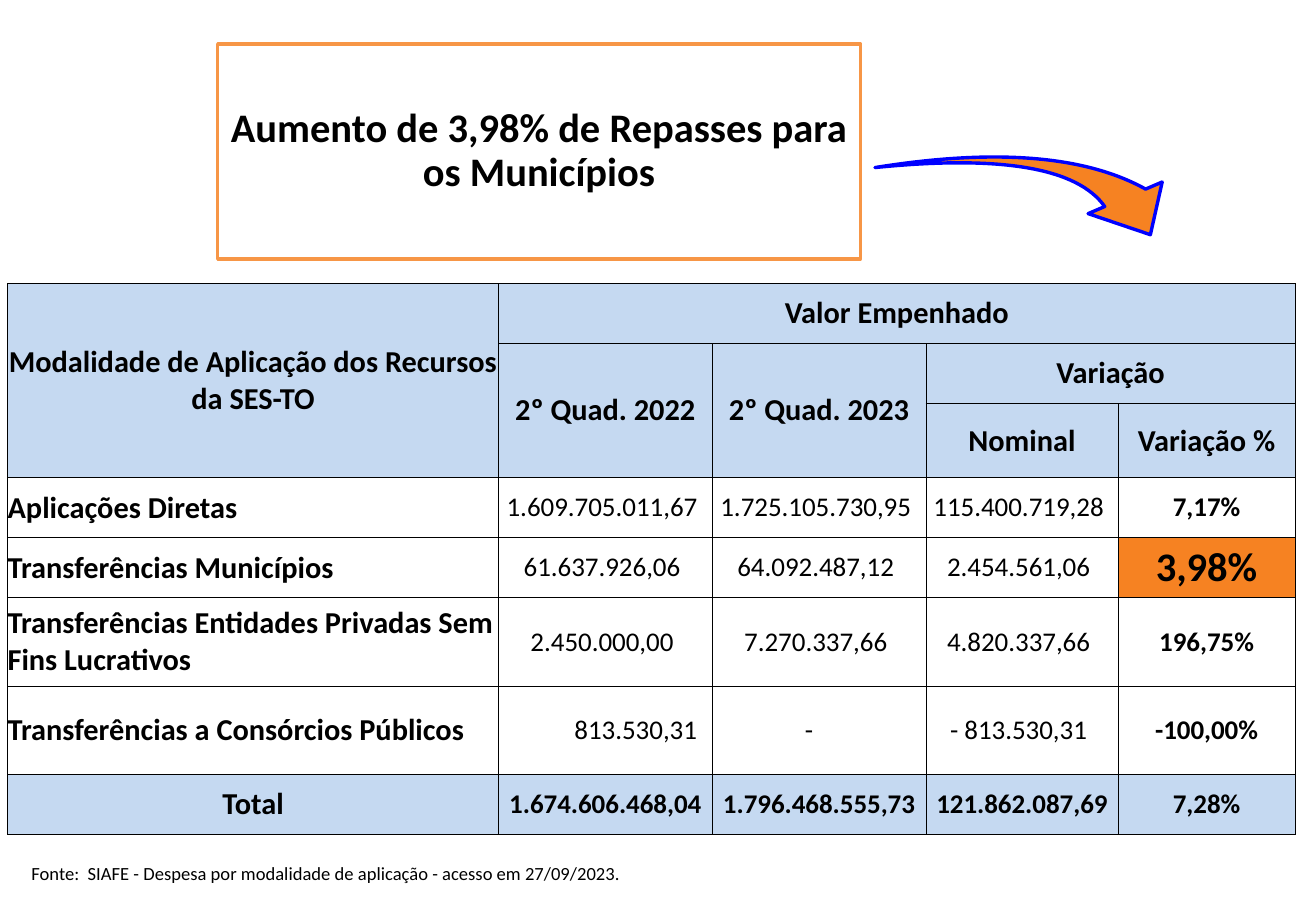
from dataclasses import dataclass

from lxml.etree import SubElement
from pptx import Presentation
from pptx.dml.color import RGBColor
from pptx.enum.shapes import MSO_SHAPE
from pptx.enum.text import MSO_ANCHOR, PP_ALIGN
from pptx.oxml.ns import qn
from pptx.util import Pt


@dataclass(frozen=True)
class Theme:
    font: str = "Calibri"
    text: str = "000000"
    paper: str = "FFFFFF"
    header: str = "C5D9F1"
    accent: str = "F68222"
    title_line: str = "F79646"
    arrow_line: str = "0000FF"
    large: int = 24
    label: int = 18
    value: int = 16
    source: int = 11


THEME = Theme()

COLUMN_WIDTHS = [291, 126.7, 126.7, 113.8, 105.1]
ROW_HEIGHTS = [35.6, 35.6, 44, 35.6, 35.6, 52.4, 52.4, 35.6]

# (row, column): (text, rows spanned, columns spanned)
HEADINGS = {
    (0, 0): ("Modalidade de Aplicação dos Recursos da SES-TO", 3, 1),
    (0, 1): ("Valor Empenhado", 1, 4),
    (1, 1): ("2º Quad. 2022", 2, 1),
    (1, 2): ("2º Quad. 2023", 2, 1),
    (1, 3): ("Variação", 1, 2),
    (2, 3): ("Nominal", 1, 1),
    (2, 4): ("Variação %", 1, 1),
}
FIRST_DATA_ROW = 3
SPENDING = [
    ("Aplicações Diretas",
     "1.609.705.011,67", "1.725.105.730,95", "115.400.719,28", "7,17%"),
    ("Transferências Municípios",
     "61.637.926,06", "64.092.487,12", "2.454.561,06", "3,98%"),
    ("Transferências Entidades Privadas Sem Fins Lucrativos",
     "2.450.000,00", "7.270.337,66", "4.820.337,66", "196,75%"),
    ("Transferências a Consórcios Públicos",
     "813.530,31", "-", "- 813.530,31", "-100,00%"),
    ("Total",
     "1.674.606.468,04", "1.796.468.555,73", "121.862.087,69", "7,28%"),
]
TOTAL_ROW = FIRST_DATA_ROW + len(SPENDING) - 1
HIGHLIGHT = (4, 4)
# Cells whose figure is set differently from the rest of its column
CELL_FORMATS = {
    (6, 1): {"align": PP_ALIGN.RIGHT, "margin_right": 9},
    (6, 2): {"margin_right": 12},
    HIGHLIGHT: {"size": THEME.large},
}


def apply(target, values):
    for name, value in values.items():
        setattr(target, name, value)


def write(frame, text, size, bold=False, align=PP_ALIGN.CENTER):
    frame.text = text
    paragraph = frame.paragraphs[0]
    paragraph.alignment = align
    font = paragraph.runs[0].font
    apply(font, {"name": THEME.font, "size": Pt(size), "bold": bold})
    font.color.rgb = RGBColor.from_string(THEME.text)
    return paragraph


def paint(shape, fill, line):
    shape.fill.solid()
    shape.fill.fore_color.rgb = RGBColor.from_string(fill)
    shape.line.color.rgb = RGBColor.from_string(line)
    shape.line.width = Pt(2)


def add_title(slide, text):
    title = slide.shapes.title
    apply(title, {"left": Pt(129), "top": Pt(26),
                  "width": Pt(381), "height": Pt(127.5)})
    paint(title, THEME.paper, THEME.title_line)
    frame = title.text_frame
    apply(frame, {"word_wrap": True, "vertical_anchor": MSO_ANCHOR.MIDDLE,
                  "margin_left": Pt(2), "margin_right": Pt(2),
                  "margin_top": Pt(2), "margin_bottom": Pt(2)})
    write(frame, text, THEME.large, bold=True).line_spacing = 0.9


def add_arrow(slide):
    arrow = slide.shapes.add_shape(
        MSO_SHAPE.SWOOSH_ARROW, Pt(565.2), Pt(36.7), Pt(85), Pt(160.6))
    arrow.rotation = 73.3
    arrow.shadow.inherit = False
    arrow.adjustments[0] = 0.163
    arrow.adjustments[1] = 0.314
    paint(arrow, THEME.accent, THEME.arrow_line)


def add_borders(cell):
    properties = cell._tc.get_or_add_tcPr()
    for position, side in enumerate(("a:lnL", "a:lnR", "a:lnT", "a:lnB")):
        border = SubElement(properties, qn(side), w=str(Pt(0.5)))
        fill = SubElement(border, qn("a:solidFill"))
        SubElement(fill, qn("a:srgbClr"), val=THEME.text)
        properties.insert(position, border)


def fill_cell(cell, color):
    if color:
        cell.fill.solid()
        cell.fill.fore_color.rgb = RGBColor.from_string(color)
    else:
        cell.fill.background()


def cell_color(row, column):
    if (row, column) == HIGHLIGHT:
        return THEME.accent
    return THEME.header if row < FIRST_DATA_ROW or row == TOTAL_ROW else None


def write_headings(table):
    for (row, column), (text, rows, columns) in HEADINGS.items():
        heading = table.cell(row, column)
        if rows * columns > 1:
            heading.merge(table.cell(row + rows - 1, column + columns - 1))
        write(heading.text_frame, text, THEME.label, bold=True)


def write_spending(table):
    last_column = len(COLUMN_WIDTHS) - 1
    for row, texts in enumerate(SPENDING, FIRST_DATA_ROW):
        is_total = row == TOTAL_ROW
        for column, text in enumerate(texts):
            is_label = column == 0
            is_amount = 0 < column < last_column
            look = {
                "size": THEME.label if is_label else THEME.value,
                "bold": is_total or not is_amount,
                "align": (PP_ALIGN.LEFT if is_label and not is_total
                          else PP_ALIGN.CENTER),
                "margin_right": 4 if is_amount and not is_total else 0,
            } | CELL_FORMATS.get((row, column), {})
            cell = table.cell(row, column)
            cell.margin_right = Pt(look.pop("margin_right"))
            write(cell.text_frame, text, **look)


def add_spending_table(slide):
    table = slide.shapes.add_table(
        len(ROW_HEIGHTS), len(COLUMN_WIDTHS), Pt(4.5), Pt(168),
        Pt(sum(COLUMN_WIDTHS)), Pt(sum(ROW_HEIGHTS))).table
    apply(table, {"first_row": False, "horz_banding": False})
    for column, width in zip(table.columns, COLUMN_WIDTHS):
        column.width = Pt(width)
    for row, height in zip(table.rows, ROW_HEIGHTS):
        row.height = Pt(height)
    for row in range(len(ROW_HEIGHTS)):
        for column in range(len(COLUMN_WIDTHS)):
            cell = table.cell(row, column)
            apply(cell, {"margin_left": 0, "margin_right": 0,
                         "margin_top": 0, "margin_bottom": 0,
                         "vertical_anchor": MSO_ANCHOR.MIDDLE})
            fill_cell(cell, cell_color(row, column))
            add_borders(cell)
    write_headings(table)
    write_spending(table)


def add_source(slide, text):
    source = slide.shapes.add_textbox(Pt(11.5), Pt(507.6), Pt(736), Pt(21))
    source.text_frame.word_wrap = True
    write(source.text_frame, text, THEME.source, align=PP_ALIGN.LEFT)


def main():
    deck = Presentation()
    apply(deck, {"slide_width": Pt(780), "slide_height": Pt(540)})
    slide = deck.slides.add_slide(deck.slide_layouts.get_by_name("Title Only"))
    add_title(slide, "Aumento de 3,98% de Repasses para os Municípios")
    add_arrow(slide)
    add_spending_table(slide)
    add_source(slide, "Fonte:  SIAFE - Despesa por modalidade de aplicação"
                      " - acesso em 27/09/2023.")
    deck.save("out.pptx")


if __name__ == "__main__":
    main()
